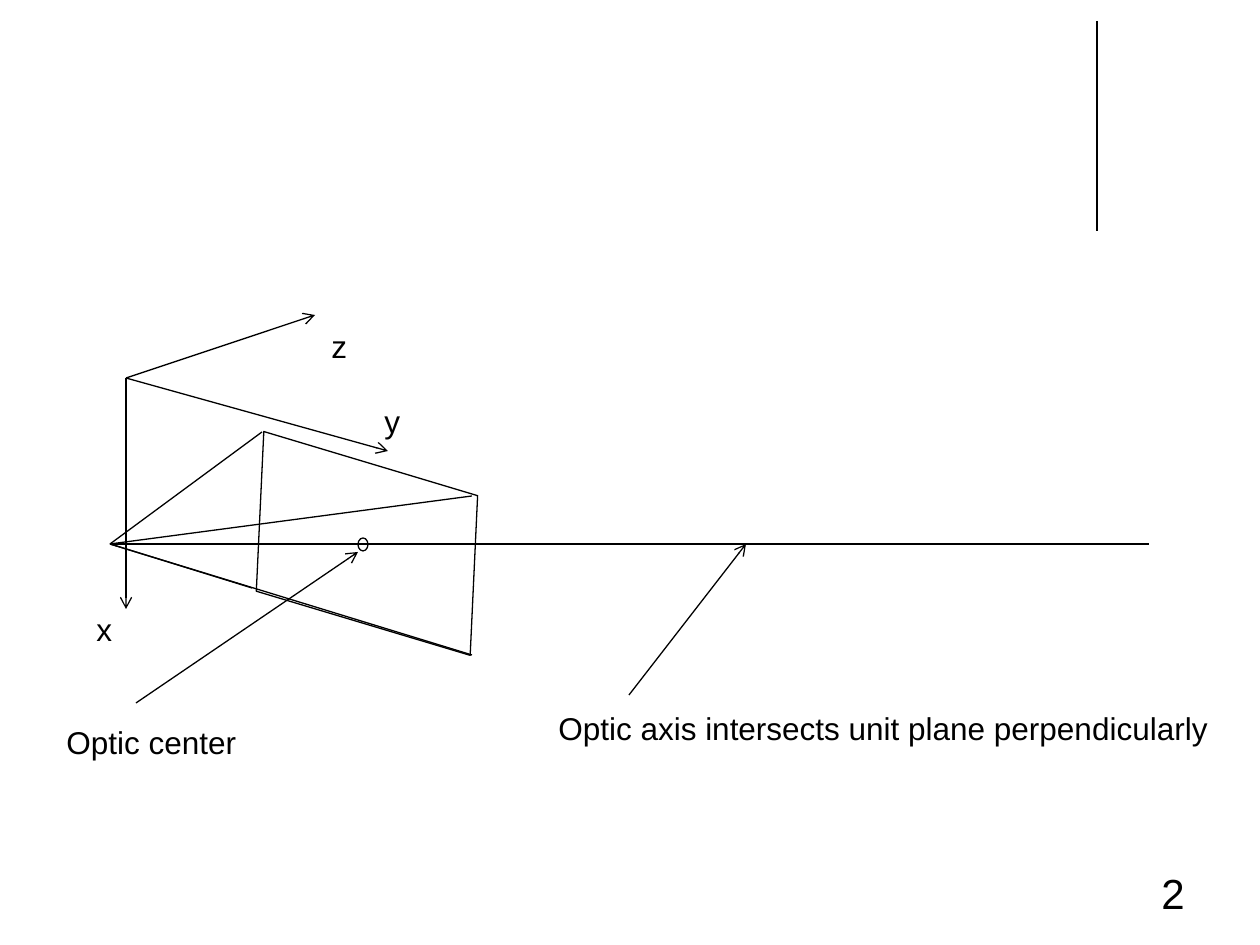
"""Build the slide showing the optic axis crossing the unit plane."""
from dataclasses import dataclass

from lxml.etree import SubElement
from pptx import Presentation
from pptx.dml.color import RGBColor
from pptx.enum.shapes import MSO_CONNECTOR as Connector, MSO_SHAPE as Preset
from pptx.enum.text import MSO_ANCHOR as Anchor, PP_ALIGN as Align
from pptx.oxml.ns import qn
from pptx.shapes.autoshape import Shape
from pptx.slide import Slide
from pptx.util import Emu, Pt

PX_PER_INCH = 126
COLORS = {"ink": "000000", "paper": "FFFFFF"}
FONT = "Arial"
LINE_WIDTH = Pt(0.75)

Point = tuple[int, int]


@dataclass(frozen=True)
class Segment:
    start: Point
    end: Point
    arrow: bool = False


@dataclass(frozen=True)
class Label:
    text: str
    left: int
    top: int
    width: int
    height: int = 50
    size: int = 18
    wrap: bool = False
    align: Align = Align.LEFT
    anchor: Anchor = Anchor.TOP


@dataclass(frozen=True)
class Outline:
    preset: Preset
    left: int
    top: int
    width: int
    height: int
    rotation: float = 0
    flipped: bool = False


VIEWPOINT = (110, 544)
AXES_ORIGIN = (126, 378)

MARGIN_RULE = Segment((1097, 21), (1097, 231))
UNIT_PLANE = Outline(Preset.PARALLELOGRAM, 236, 466, 262, 155, 16.7, True)
OPTIC_CENTER = Outline(Preset.OVAL, 358, 538, 10, 13)
RAY_ENDS = [(262, 432), (252, 588), (472, 655), (472, 496), (1149, 544)]
AXIS_ENDS = [(315, 315), (388, 451), (126, 609)]
POINTERS = [
    Segment((136, 703), (358, 552), True),
    Segment((629, 695), (746, 544), True),
]
LABELS = [
    Label("Optic center", 54, 717, 197),
    Label("Optic axis intersects unit plane perpendicularly", 546, 703, 682),
    Label("x", 84, 604, 42),
    Label("y", 372, 396, 42),
    Label("z", 319, 321, 42),
    Label("2", 903, 861, 294, 63, 24, True, Align.RIGHT, Anchor.BOTTOM),
]


def px(length: int) -> Emu:
    """Turn pixels into EMU."""
    return Emu(round(length * 914400 / PX_PER_INCH))


def color(name: str) -> RGBColor:
    """Look up a named colour."""
    return RGBColor.from_string(COLORS[name])


def draw_segment(slide: Slide, segment: Segment) -> None:
    """Draw a straight line, with an arrowhead at its end if asked."""
    ends = [px(value) for value in (*segment.start, *segment.end)]
    connector = slide.shapes.add_connector(Connector.STRAIGHT, *ends)
    connector.line.color.rgb = color("ink")
    connector.line.width = LINE_WIDTH
    properties = connector._element.spPr
    if segment.arrow:
        SubElement(properties.find(qn("a:ln")), qn("a:tailEnd"), type="arrow")
    SubElement(properties, qn("a:effectLst"))


def draw_outline(slide: Slide, outline: Outline) -> Shape:
    """Draw an unfilled preset shape."""
    box = [px(v) for v in (outline.left, outline.top, outline.width, outline.height)]
    shape = slide.shapes.add_shape(outline.preset, *box)
    shape.shadow.inherit = False
    shape.fill.background()
    shape.line.color.rgb = color("ink")
    shape.line.width = LINE_WIDTH
    shape.rotation = outline.rotation
    if outline.flipped:
        shape._element.spPr.xfrm.set("flipV", "1")
    return shape


def draw_label(slide: Slide, label: Label) -> None:
    """Write a one-line label."""
    box = [px(v) for v in (label.left, label.top, label.width, label.height)]
    frame = slide.shapes.add_textbox(*box).text_frame
    frame.word_wrap = label.wrap
    frame.vertical_anchor = label.anchor
    frame.text = label.text
    paragraph = frame.paragraphs[0]
    paragraph.alignment = label.align
    font = paragraph.runs[0].font
    font.name = FONT
    font.size = Pt(label.size)
    font.color.rgb = color("ink")


def main() -> None:
    """Assemble and save the slide."""
    deck = Presentation()
    deck.slide_width, deck.slide_height = px(1260), px(945)
    slide = deck.slides.add_slide(deck.slide_layouts[6])
    slide.background.fill.solid()
    slide.background.fill.fore_color.rgb = color("paper")

    draw_segment(slide, MARGIN_RULE)
    draw_outline(slide, UNIT_PLANE)
    for end in RAY_ENDS:
        draw_segment(slide, Segment(VIEWPOINT, end))
    draw_outline(slide, OPTIC_CENTER)
    for pointer in POINTERS:
        draw_segment(slide, pointer)
    for end in AXIS_ENDS:
        draw_segment(slide, Segment(AXES_ORIGIN, end, True))
    for label in LABELS:
        draw_label(slide, label)
    deck.save("out.pptx")


if __name__ == "__main__":
    main()
